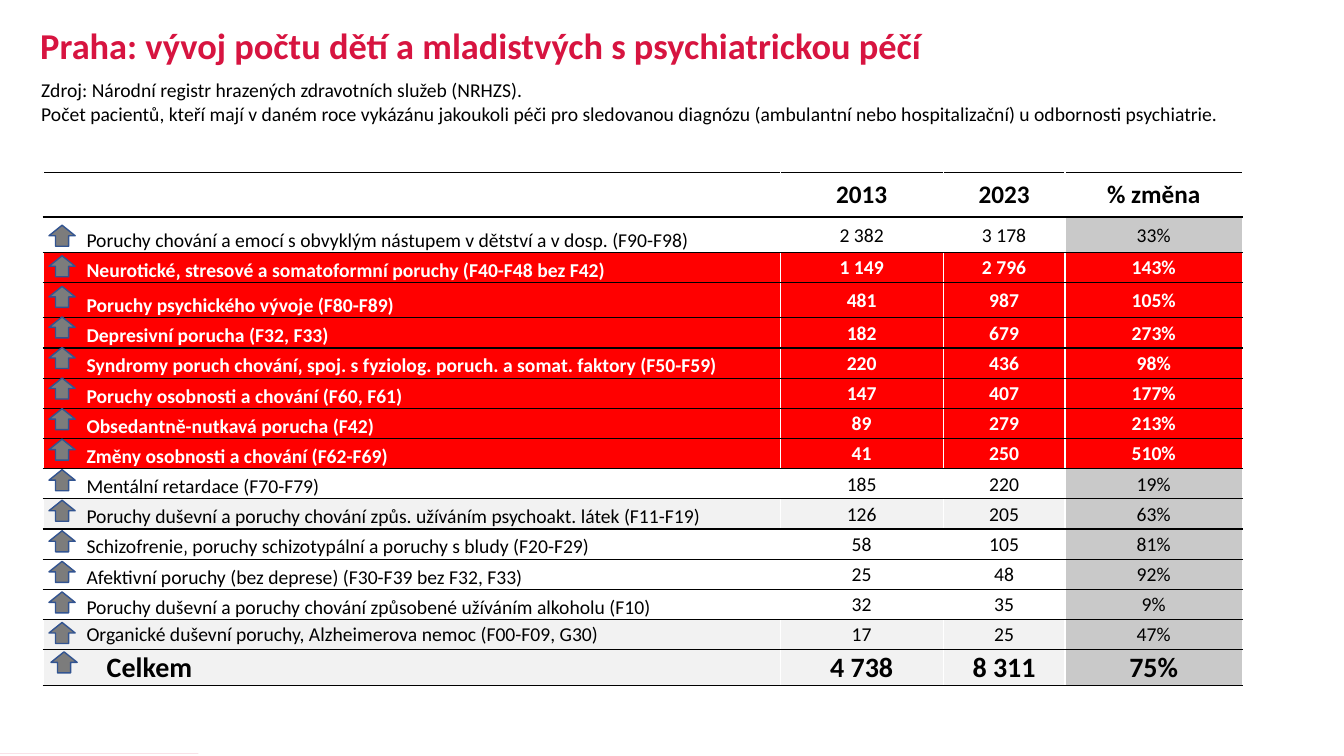
from lxml import etree
from pptx import Presentation
from pptx.dml.color import RGBColor
from pptx.enum.shapes import MSO_SHAPE
from pptx.enum.text import MSO_ANCHOR, MSO_AUTO_SIZE, PP_ALIGN
from pptx.oxml import parse_xml
from pptx.oxml.ns import nsdecls, qn
from pptx.util import Cm, Pt

COLORS = {
    "crimson": "D71440", "navy": "2E5980", "red": "FF0000", "gray": "C9C9C9",
    "light": "F2F2F2", "arrow": "7C7C7C", "outline": "325491",
    "black": "000000", "white": "FFFFFF",
}


def rgb(name):
    return RGBColor.from_string(COLORS[name])


def write(tf, text, size=14, color="black", bold=False, align=PP_ALIGN.LEFT, spacing=None):
    p = tf.paragraphs[0]
    p.alignment = align
    p.line_spacing = spacing
    for i, line in enumerate(text.split("\n")):
        if i:
            p.add_line_break()
        r = p.add_run()
        r.text = line
        r.font.name = "Calibri"
        r.font.size = Pt(size)
        r.font.bold = bold
        r.font.color.rgb = rgb(color)


prs = Presentation()
prs.slide_width, prs.slide_height = Cm(33.87), Cm(19.05)
s = prs.slides.add_slide(prs.slide_layouts[5])

corners = [
    ("crimson", [(5.41, 19.05), (-0.86, 18.9), (0.2, 19.28), (0, 16)], (0, 19.05), 225),
    ("navy", [(28.22, 0), (34.8, 0.18), (33.68, -0.25), (33.87, 3.61)], (33.87, 0), 45),
]
for color, curve, corner, angle in corners:
    points = []
    for step in range(41):
        t = step / 40
        weights = ((1 - t) ** 3, 3 * t * (1 - t) ** 2, 3 * t * t * (1 - t), t ** 3)
        points.append([sum(w * c[axis] for w, c in zip(weights, curve)) for axis in (0, 1)])
    builder = s.shapes.build_freeform(*points[0], scale=Cm(1))
    builder.add_line_segments(points[1:] + [corner], close=True)
    sp = builder.convert_to_shape()
    sp.fill.solid()
    sp.fill.fore_color.rgb = rgb(color)
    sp.line.fill.background()
    sp.shadow.inherit = False
    effects = sp._element.spPr.find(qn("a:effectLst"))
    effects.append(parse_xml(
        f'<a:outerShdw {nsdecls("a")} blurRad="50800" dist="38100" dir="{angle * 60000}" '
        'algn="tl" rotWithShape="0"><a:srgbClr val="000000"><a:alpha val="40000"/>'
        '</a:srgbClr></a:outerShdw>'))

title = s.shapes.title
title.left, title.top, title.width, title.height = Cm(0.76), Cm(0.46), Cm(29.2), Cm(1.5)
tf = title.text_frame
tf.auto_size = MSO_AUTO_SIZE.NONE
tf.vertical_anchor = MSO_ANCHOR.MIDDLE
write(tf, "Praha: vývoj počtu dětí a mladistvých s psychiatrickou péčí",
      size=26, color="crimson", bold=True, spacing=0.9)

rows = [
    ("", "2013", "2023", "% změna"),
    ("Poruchy chování a emocí s obvyklým nástupem v dětství a v dosp. (F90-F98)", "2 382", "3 178", "33%"),
    ("Neurotické‚ stresové a somatoformní poruchy (F40-F48 bez F42)", "1 149", "2 796", "143%"),
    ("Poruchy psychického vývoje (F80-F89)", "481", "987", "105%"),
    ("Depresivní porucha (F32, F33)", "182", "679", "273%"),
    ("Syndromy poruch chování‚ spoj. s fyziolog. poruch. a somat. faktory (F50-F59)", "220", "436", "98%"),
    ("Poruchy osobnosti a chování (F60, F61)", "147", "407", "177%"),
    ("Obsedantně-nutkavá porucha (F42)", "89", "279", "213%"),
    ("Změny osobnosti a chování (F62-F69)", "41", "250", "510%"),
    ("Mentální retardace (F70-F79)", "185", "220", "19%"),
    ("Poruchy duševní a poruchy chování způs. užíváním psychoakt. látek (F11-F19)", "126", "205", "63%"),
    ("Schizofrenie‚ poruchy schizotypální a poruchy s bludy (F20-F29)", "58", "105", "81%"),
    ("Afektivní poruchy (bez deprese) (F30-F39 bez F32, F33)", "25", "48", "92%"),
    ("Poruchy duševní a poruchy chování způsobené užíváním alkoholu (F10)", "32", "35", "9%"),
    ("Organické duševní poruchy, Alzheimerova nemoc (F00-F09, G30)", "17", "25", "47%"),
    ("Celkem", "4 738", "8 311", "75%"),
]
last = len(rows) - 1
heights = {0: 1.13, 1: 0.89, 3: 0.89, last: 0.91}
sizes = {0: 18, last: 20}
highlighted = range(2, 9)
shaded = (10, 14, last)
borders = [("lnL", "white"), ("lnR", "white"), ("lnT", "black"), ("lnB", "black")]

frame = s.shapes.add_table(len(rows), 4, Cm(1.09), Cm(4.34), Cm(30.22), Cm(12.94))
table = frame.table
table.first_row = False
table.horz_banding = False
for column, width in zip(table.columns, (18.57, 4.11, 3.07, 4.47)):
    column.width = Cm(width)

for i, values in enumerate(rows):
    table.rows[i].height = Cm(heights.get(i, 0.76))
    for j, value in enumerate(values):
        cell = table.cell(i, j)
        cell.margin_left = Cm(0.03)
        if j == 0:
            cell.margin_left = Cm(1.6 if i == last else 1.09)
        cell.margin_right = cell.margin_top = Cm(0.03)
        cell.margin_bottom = 0
        low = j == 0 and 0 < i < last - 1
        cell.vertical_anchor = MSO_ANCHOR.BOTTOM if low else MSO_ANCHOR.MIDDLE
        tc_pr = cell._tc.get_or_add_tcPr()
        for tag, color in borders:
            ln = etree.SubElement(tc_pr, qn(f"a:{tag}"), w="12700")
            solid = etree.SubElement(ln, qn("a:solidFill"))
            etree.SubElement(solid, qn("a:srgbClr"), val=COLORS[color])
        if i in highlighted:
            fill = "red"
        elif j == 3 and i:
            fill = "gray"
        else:
            fill = "light" if i in shaded else None
        if fill:
            cell.fill.solid()
            cell.fill.fore_color.rgb = rgb(fill)
        else:
            cell.fill.background()
        if value:
            write(cell.text_frame, value, size=sizes.get(i, 14),
                  color="white" if i in highlighted else "black",
                  bold=i in sizes or i in highlighted,
                  align=PP_ALIGN.CENTER if j else PP_ALIGN.LEFT)

source = s.shapes.add_textbox(Cm(0.79), Cm(1.85), Cm(32.33), Cm(1.45))
source.text_frame.word_wrap = True
write(source.text_frame,
      "Zdroj: Národní registr hrazených zdravotních služeb (NRHZS).\n"
      "Počet pacientů, kteří mají v daném roce vykázánu jakoukoli péči pro sledovanou "
      "diagnózu (ambulantní nebo hospitalizační) u odbornosti psychiatrie.")

arrows = [(1.3, 5.61 + 0.77 * i) for i in range(last - 1)] + [(1.35, 16.36)]
for left, top in arrows:
    sp = s.shapes.add_shape(MSO_SHAPE.RIGHT_ARROW, Cm(left), Cm(top), Cm(0.53), Cm(0.66))
    sp.rotation = 270
    sp.shadow.inherit = False
    sp.fill.solid()
    sp.fill.fore_color.rgb = rgb("arrow")
    sp.line.color.rgb = rgb("outline")
    sp.line.width = Pt(1)

prs.save("out.pptx")
